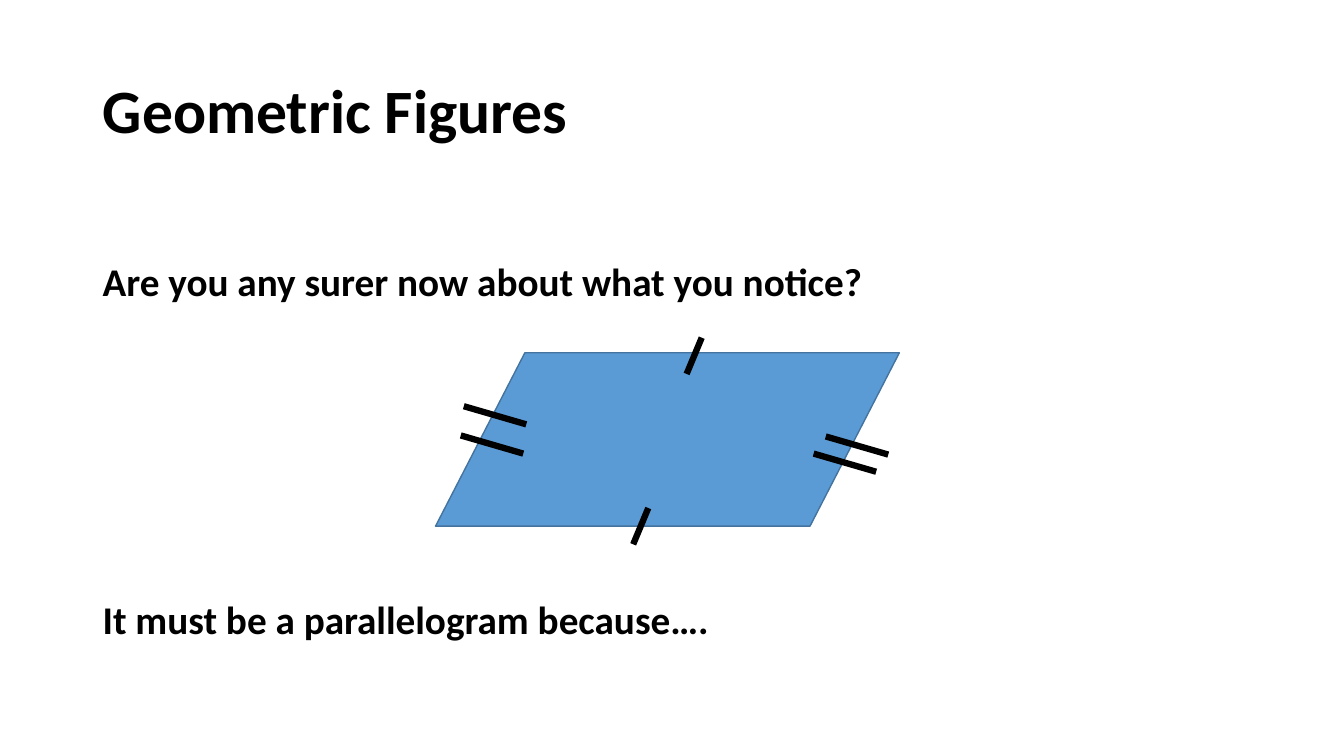
from lxml import etree
from pptx import Presentation, util as u
from pptx.dml.color import RGBColor
from pptx.enum import shapes, text
from pptx.oxml.ns import qn

PX = 9144  # EMU per px, 100 px to the inch
FONT = "Calibri"
COLORS = {"ink": "000000", "figure": "5B9BD5", "outline": "43739E"}

# Tick marks: (dx, dy) of the stroke, then start points within the figure box
SIDE_TICKS = [
    ((-15, 36), [(264, -15), (211, 154)]),
    ((-62, -18), [(437, 118), (449, 101), (87, 100), (90, 71)]),
]


def px(*lengths):
    return [u.Emu(length * PX) for length in lengths]


def color(name):
    return RGBColor.from_string(COLORS[name])


def format_paragraph(paragraph, size):
    paragraph.alignment = text.PP_ALIGN.LEFT
    paragraph.line_spacing = 0.9
    paragraph.font.name = FONT
    paragraph.font.size = u.Pt(size)
    paragraph.font.bold = True
    paragraph.font.color.rgb = color("ink")


def set_title(slide, box, wording):
    title = slide.shapes.title
    title.left, title.top, title.width, title.height = px(*box)
    frame = title.text_frame
    frame.text = wording
    frame.vertical_anchor = text.MSO_ANCHOR.MIDDLE
    format_paragraph(frame.paragraphs[0], 44)


def add_statements(slide, box, statements):
    """Each statement is its wording and the space before it in points."""
    frame = slide.shapes.add_textbox(*px(*box)).text_frame
    frame.word_wrap = True
    frame.text = "\n".join(wording for wording, _ in statements)
    for paragraph, (_, space) in zip(frame.paragraphs, statements):
        format_paragraph(paragraph, 28)
        paragraph.space_before = u.Pt(space)


def add_tick(slide, x, y, dx, dy):
    tick = slide.shapes.add_connector(
        shapes.MSO_CONNECTOR.STRAIGHT, *px(x, y, x + dx, y + dy))
    tick.line.color.rgb = color("ink")
    tick.line.width = u.Pt(4.5)
    etree.SubElement(tick.element.spPr, qn("a:effectLst"))


def add_marked_parallelogram(slide, box):
    figure = slide.shapes.add_shape(shapes.MSO_SHAPE.PARALLELOGRAM, *px(*box))
    figure.adjustments[0] = 0.515
    figure.shadow.inherit = False
    figure.fill.solid()
    figure.fill.fore_color.rgb = color("figure")
    figure.line.color.rgb = color("outline")
    figure.line.width = u.Pt(1)
    left, top = box[:2]
    for stroke, starts in SIDE_TICKS:
        for x, y in starts:
            add_tick(slide, left + x, top + y, *stroke)


def main():
    presentation = Presentation()
    presentation.slide_width, presentation.slide_height = px(1333, 750)
    slide = presentation.slides.add_slide(presentation.slide_layouts[5])
    set_title(slide, (92, 40, 1150, 145), "Geometric Figures")
    add_statements(slide, (92, 256, 1150, 420), [
        ("Are you any surer now about what you notice?", 10),
        ("It must be a parallelogram because….", 211),
    ])
    add_marked_parallelogram(slide, (432, 350, 460, 172))
    presentation.save("out.pptx")


if __name__ == "__main__":
    main()
